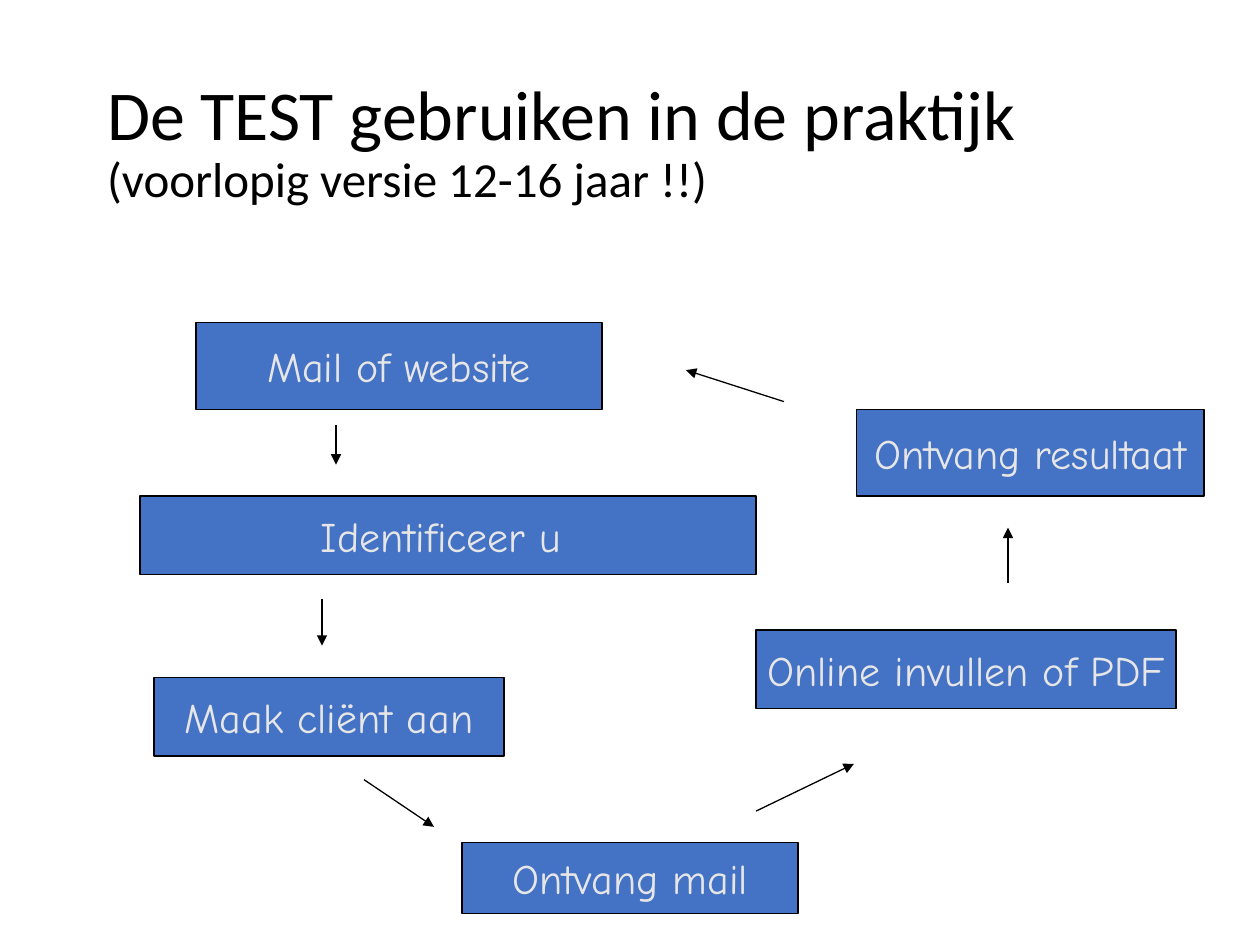
from copy import deepcopy
from typing import NamedTuple

from lxml import etree
from pptx import Presentation
from pptx import util as u
from pptx.dml.color import RGBColor
from pptx.enum import shapes, text
from pptx.oxml.ns import qn

WIDTH, HEIGHT = u.Inches(10), u.Inches(7.5)
COLUMNS, ROWS = 90, 120
BLACK, BLUE, LIGHT_GREY = "000000", "4472C4", "E7E6E6"


class Step(NamedTuple):
    label: str
    column: float
    row: float
    columns: float
    rows: float


class Arrow(NamedTuple):
    """Start and end, in grid columns and rows."""
    start: tuple[float, float]
    end: tuple[float, float]


STEPS = [
    Step("Mail of website", 14, 41, 29, 11),
    Step("Identificeer u ", 10, 63, 44, 10),
    Step("Maak cliënt aan", 11, 86, 25, 10),
    Step("Ontvang mail", 33, 107, 24, 9),
    Step("Online invullen of PDF", 54, 80, 30, 10),
    Step("Ontvang resultaat", 61.2, 52, 24.8, 11),
]
ARROWS = [
    Arrow((24, 54), (24, 59)),
    Arrow((23, 76), (23, 82)),
    Arrow((26, 99), (31, 105)),
    Arrow((54, 103), (61, 97)),
    Arrow((72, 74), (72, 67)),
    Arrow((56, 51), (49, 47)),
]


def x(column: float) -> int:
    return round(WIDTH * column / COLUMNS)


def y(row: float) -> int:
    return round(HEIGHT * row / ROWS)


def color(value: str) -> RGBColor:
    return RGBColor.from_string(value)


def style_line(line) -> None:
    line.color.rgb = color(BLACK)
    line.width = u.Pt(0.75)


def write(paragraph, content: str, *, size: float, font: str, fill: str, align):
    paragraph.alignment = align
    run = paragraph.add_run()
    run.text = content
    run.font.size = u.Pt(size)
    run.font.name = font
    run.font.color.rgb = color(fill)
    return run


def add_title(slide) -> None:
    title = slide.shapes.title
    title.left, title.top = u.Inches(0.75), u.Inches(0.52)
    title.width, title.height = u.Inches(8.5), u.Inches(1.25)
    frame = title.text_frame
    frame.vertical_anchor = text.MSO_ANCHOR.MIDDLE
    frame.auto_size = text.MSO_AUTO_SIZE.NONE
    paragraph = frame.paragraphs[0]
    paragraph.line_spacing = 0.9
    look = {"font": "Calibri", "fill": BLACK, "align": text.PP_ALIGN.LEFT}
    heading = write(paragraph, "De TEST gebruiken in de praktijk", size=40, **look)
    paragraph.add_line_break()
    # The break takes the heading's size, so the first line keeps its height.
    line_break = paragraph._p.find(qn("a:br"))
    line_break.append(deepcopy(heading._r.find(qn("a:rPr"))))
    write(paragraph, "(voorlopig versie 12-16 jaar !!)", size=28, **look)


def add_step(slide, step: Step) -> None:
    shape = slide.shapes.add_shape(
        shapes.MSO_SHAPE.RECTANGLE,
        x(step.column), y(step.row), x(step.columns), y(step.rows))
    shape.shadow.inherit = False
    shape.fill.solid()
    shape.fill.fore_color.rgb = color(BLUE)
    style_line(shape.line)
    frame = shape.text_frame
    frame.word_wrap = False
    frame.vertical_anchor = text.MSO_ANCHOR.MIDDLE
    write(frame.paragraphs[0], step.label, size=24, font="Comic Neue",
          fill=LIGHT_GREY, align=text.PP_ALIGN.CENTER)


def add_arrow(slide, arrow: Arrow) -> None:
    (start_column, start_row), (end_column, end_row) = arrow
    connector = slide.shapes.add_connector(
        shapes.MSO_CONNECTOR.STRAIGHT,
        x(start_column), y(start_row), x(end_column), y(end_row))
    style_line(connector.line)
    properties = connector._element.spPr
    etree.SubElement(properties.find(qn("a:ln")), qn("a:tailEnd"), type="triangle")
    etree.SubElement(properties, qn("a:effectLst"))


def main() -> None:
    presentation = Presentation()
    presentation.slide_width, presentation.slide_height = WIDTH, HEIGHT
    slide = presentation.slides.add_slide(
        presentation.slide_layouts.get_by_name("Title Only"))
    add_title(slide)
    for step in STEPS:
        add_step(slide, step)
    for arrow in ARROWS:
        add_arrow(slide, arrow)
    presentation.save("out.pptx")


if __name__ == "__main__":
    main()
